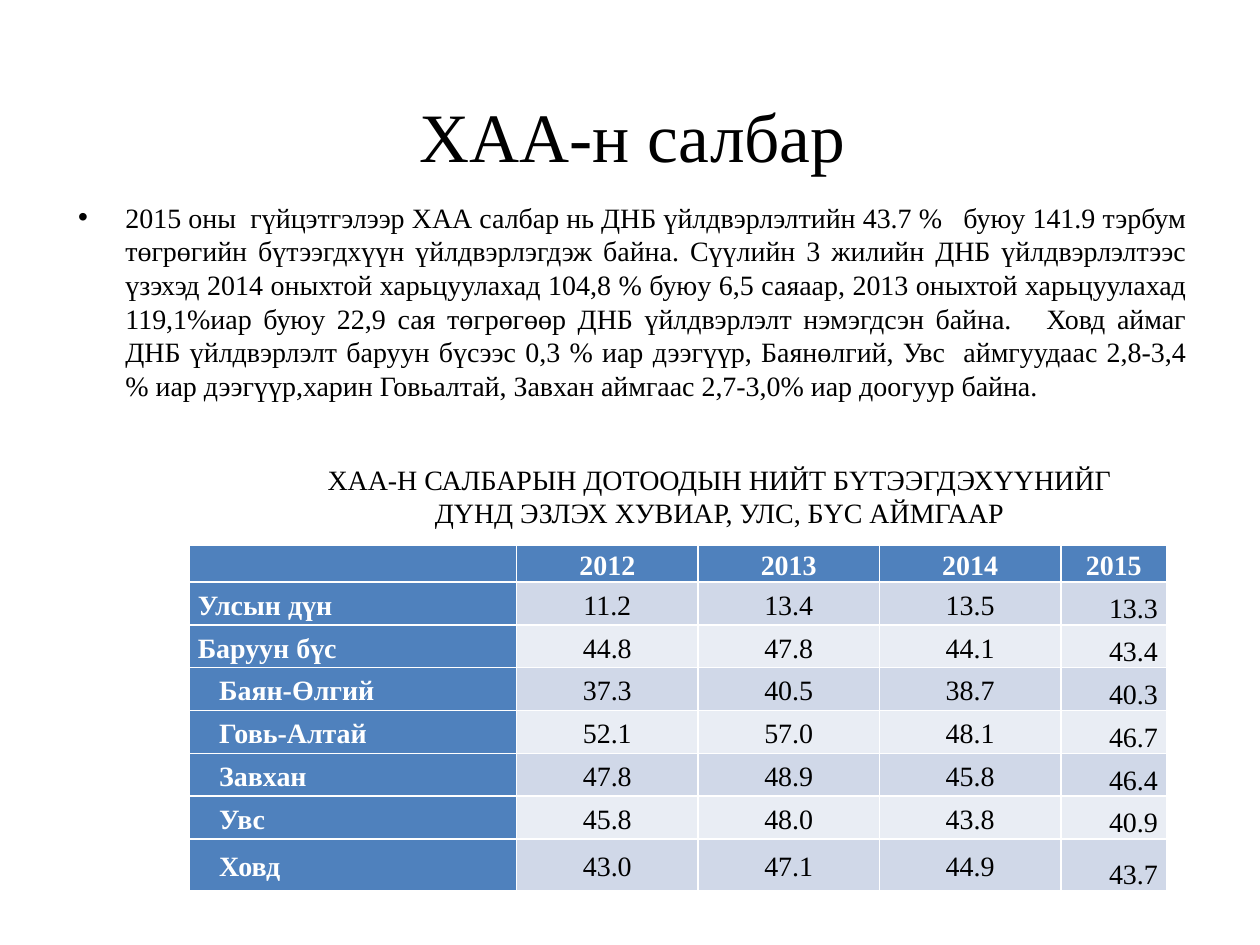
"""Builds the slide on the agricultural sector's share of GDP by region."""
from pptx import Presentation
from pptx import util as u
from pptx.dml.color import RGBColor
from pptx.enum import text

COLORS = {"ink": "000000", "head": "4F81BD", "head_text": "FFFFFF", "odd": "D0D8E8", "even": "E9EDF4"}
ALIGN = text.PP_ALIGN
ANCHOR = text.MSO_ANCHOR


def write(paragraph, wording, size, align, color="ink", bold=False, spacing=None):
    for name, value in {"alignment": align, "space_before": u.Pt(0), "line_spacing": spacing}.items():
        setattr(paragraph, name, value)
    run = paragraph.add_run()
    run.text = wording
    for name, value in {"name": "Times New Roman", "size": u.Pt(size), "bold": bold}.items():
        setattr(run.font, name, value)
    run.font.color.rgb = RGBColor.from_string(COLORS[color])


def place(box, left, top, width, height, **frame_format):
    for name, value in {"left": left, "top": top, "width": width, "height": height}.items():
        setattr(box, name, u.Inches(value))
    frame_format = {"word_wrap": True, "auto_size": text.MSO_AUTO_SIZE.NONE, **frame_format}
    for name, value in frame_format.items():
        setattr(box.text_frame, name, value)
    return box.text_frame.paragraphs[0]


deck = Presentation()
deck.slide_width, deck.slide_height = u.Inches(10), u.Inches(7.5)
slide = deck.slides.add_slide(deck.slide_layouts[1])
title, body = slide.placeholders

heading = place(title, 0.52, 0.75, 9, 1.25, vertical_anchor=ANCHOR.MIDDLE, margin_bottom=u.Inches(0.66))
write(heading, "ХАА-н салбар", 39.6, ALIGN.CENTER)

summary = place(body, 0.52, 1.5, 9, 2.08, margin_top=u.Inches(0.09))
write(
    summary,
    "2015 оны  гүйцэтгэлээр ХАА салбар нь ДНБ үйлдвэрлэлтийн 43.7 %   буюу 141.9 тэрбум "
    "төгрөгийн бүтээгдхүүн үйлдвэрлэгдэж байна. Сүүлийн 3 жилийн ДНБ үйлдвэрлэлтээс "
    "үзэхэд 2014 оныхтой харьцуулахад 104,8 % буюу 6,5 саяаар, 2013 оныхтой харьцуулахад "
    "119,1%иар буюу 22,9 сая төгрөгөөр ДНБ үйлдвэрлэлт нэмэгдсэн байна.   Ховд аймаг "
    "ДНБ үйлдвэрлэлт баруун бүсээс 0,3 % иар дээгүүр, Баянөлгий, Увс  аймгуудаас 2,8-3,4 "
    "% иар дээгүүр,харин Говьалтай, Завхан аймгаас 2,7-3,0% иар доогуур байна.",
    16, ALIGN.JUSTIFY,
)

caption_box = slide.shapes.add_textbox(0, 0, 0, 0)
caption = place(caption_box, 2.42, 3.58, 6.58, 0.67, margin_top=u.Inches(0.09))
write(
    caption,
    "ХАА-Н САЛБАРЫН ДОТООДЫН НИЙТ БҮТЭЭГДЭХҮҮНИЙГ ДҮНД ЭЗЛЭХ ХУВИАР, УЛС, БҮС АЙМГААР",
    16, ALIGN.CENTER,
)

shares = [
    ("", "2012", "2013", "2014", "2015"),
    ("Улсын дүн", "11.2", "13.4", "13.5", "13.3"),
    ("Баруун бүс", "44.8", "47.8", "44.1", "43.4"),
    ("Баян-Өлгий", "37.3", "40.5", "38.7", "40.3"),
    ("Говь-Алтай", "52.1", "57.0", "48.1", "46.7"),
    ("Завхан", "47.8", "48.9", "45.8", "46.4"),
    ("Увс", "45.8", "48.0", "43.8", "40.9"),
    ("Ховд", "43.0", "47.1", "44.9", "43.7"),
]
column_widths = [2.6, 1.44, 1.44, 1.44, 0.84]
row_heights = [0.29] + [0.34] * 6 + [0.41]
first_province, last_year = 3, len(column_widths) - 1

share_table = slide.shapes.add_table(
    len(shares), len(column_widths), u.Inches(1.5), u.Inches(4.33),
    u.Inches(sum(column_widths)), u.Inches(sum(row_heights)),
).table
share_table.first_col = True
for column, width in zip(share_table.columns, column_widths):
    column.width = u.Inches(width)

for r, (entries, height) in enumerate(zip(shares, row_heights)):
    share_table.rows[r].height = u.Inches(height)
    for c, entry in enumerate(entries):
        cell = share_table.cell(r, c)
        is_head = r == 0 or c == 0
        is_latest = r > 0 and c == last_year
        is_province = r >= first_province and c == 0
        cell_format = {
            "margin_left": u.Inches(0.24 if is_province else 0.07),
            "margin_right": u.Inches(0.07),
            "margin_top": 0,
            "margin_bottom": 0,
            "vertical_anchor": ANCHOR.BOTTOM if is_latest else ANCHOR.MIDDLE,
        }
        for name, value in cell_format.items():
            setattr(cell, name, value)
        cell.fill.solid()
        band = "head" if is_head else "odd" if r % 2 else "even"
        cell.fill.fore_color.rgb = RGBColor.from_string(COLORS[band])
        align = ALIGN.RIGHT if is_latest else ALIGN.JUSTIFY if c == 0 else ALIGN.CENTER
        write(cell.text_frame.paragraphs[0], entry, 16, align,
              "head_text" if is_head else "ink", is_head, 1.15)

deck.save("out.pptx")
